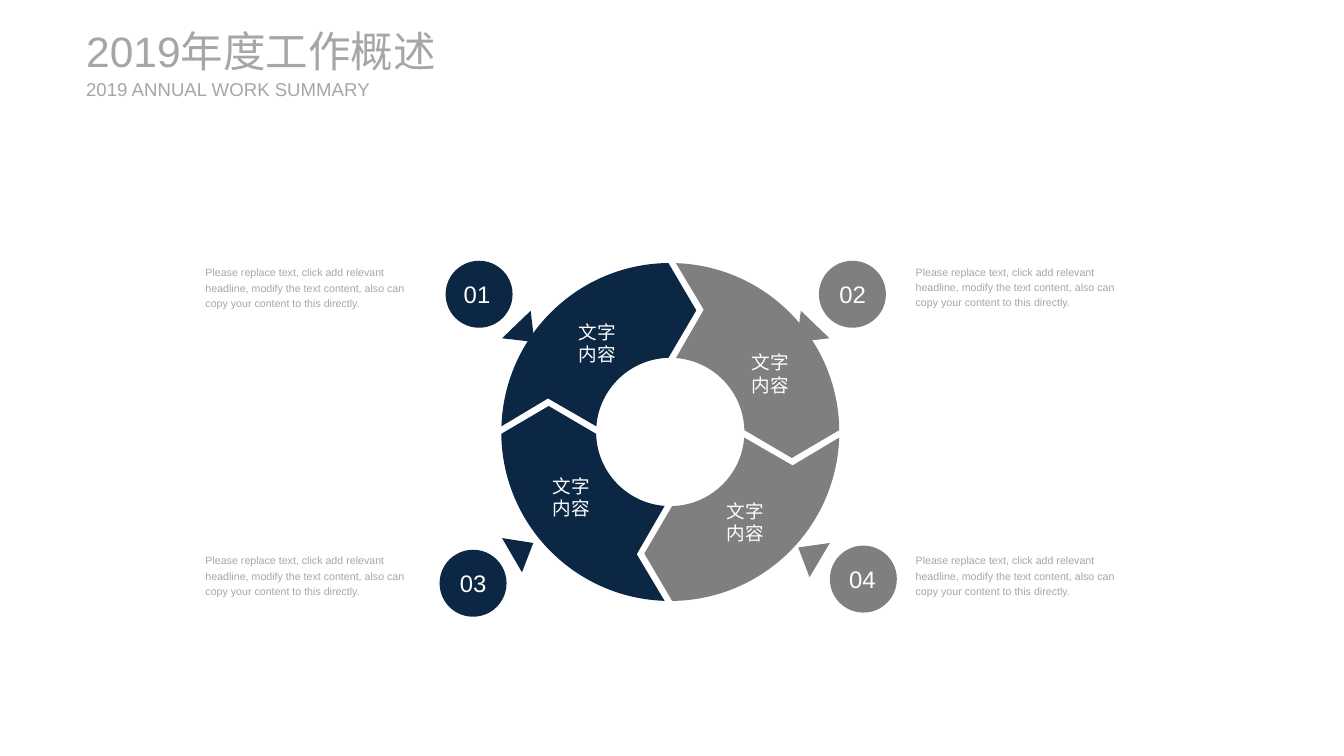
import math
from dataclasses import dataclass

import pptx
import pptx.dml.color
import pptx.enum.shapes
import pptx.enum.text
import pptx.oxml.ns
import pptx.util

Cm = pptx.util.Cm
Align = pptx.enum.text.PP_ALIGN
Anchor = pptx.enum.text.MSO_ANCHOR
Point = tuple[float, float]


@dataclass(frozen=True)
class Theme:
    font: str = "Arial"
    navy: str = "0C2744"
    gray: str = "7F7F7F"
    pale: str = "A6A6A6"
    white: str = "FFFFFF"
    title_size: int = 32
    number_size: int = 18
    label_size: int = 14
    caption_size: int = 8


@dataclass(frozen=True)
class Badge:
    number: str
    color: str
    corner: Point
    number_corner: Point
    pointer: tuple[Point, Point, Point]
    caption: Point
    caption_width: float


@dataclass(frozen=True)
class Segment:
    quarter_turns: int
    color: str
    label: Point


THEME = Theme()
CAPTION = (
    "Please replace text, click add relevant headline, modify the text "
    "content, also can copy your content to this directly."
)
RING_CENTER = (17.81, 11.48)
OUTER_RADIUS = 4.49
INNER_RADIUS = 1.97
TIP = (0.69, -3.23)
NOTCH = (-3.25, -0.89)
TIP_GAP = 0.05
NOTCH_GAP = 0.15
CURVE_STARTS = (1, 6)
BADGE_SIZE = 1.78

BADGES = [
    Badge("04", THEME.gray, (22.05, 14.5), (22.05, 14.71),
          ((21.51, 15.34), (22.05, 14.43), (21.21, 14.55)), (24.33, 14.66), 5.84),
    Badge("03", THEME.navy, (11.68, 14.61), (11.71, 14.81),
          ((13.34, 14.3), (13.87, 15.21), (14.17, 14.43)), (5.46, 14.66), 5.72),
    Badge("02", THEME.gray, (21.76, 6.93), (21.79, 7.14),
          ((21.28, 8.26), (22.04, 8.99), (21.17, 9.09)), (24.33, 6.99), 5.84),
    Badge("01", THEME.navy, (11.84, 6.93), (11.81, 7.14),
          ((14.1, 8.26), (13.34, 8.99), (14.2, 9.09)), (5.46, 7.01), 5.72),
]
SEGMENTS = [
    Segment(3, THEME.navy, (14.48, 12.27)),
    Segment(2, THEME.gray, (19.1, 12.93)),
    Segment(1, THEME.gray, (19.77, 8.99)),
    Segment(0, THEME.navy, (15.17, 8.18)),
]


def write_text(shape, text: str, *, size: int, color: str, align=Align.LEFT,
               anchor=Anchor.MIDDLE, line_spacing: float = 1.0) -> None:
    frame = shape.text_frame
    frame.auto_size = pptx.enum.text.MSO_AUTO_SIZE.NONE
    frame.word_wrap = True
    frame.vertical_anchor = anchor
    frame.margin_left = frame.margin_right = Cm(0)
    frame.margin_top = frame.margin_bottom = Cm(0)
    para = frame.paragraphs[0]
    para.alignment = align
    para.line_spacing = line_spacing
    span = para.add_run()
    span.text = text
    span.font.name = THEME.font
    span.font.size = pptx.util.Pt(size)
    span.font.color.rgb = pptx.dml.color.RGBColor.from_string(color)


def add_text_box(page, corner: Point, width: float, height: float, text: str, **style) -> None:
    box = page.shapes.add_textbox(Cm(corner[0]), Cm(corner[1]), Cm(width), Cm(height))
    write_text(box, text, **style)


def paint(shape, color: str) -> None:
    shape.shadow.inherit = False
    shape.fill.solid()
    shape.fill.fore_color.rgb = pptx.dml.color.RGBColor.from_string(color)
    shape.line.fill.background()


def add_polygon(shapes, points: list[Point], color: str):
    corners = [(Cm(x), Cm(y)) for x, y in points]
    builder = shapes.build_freeform(*corners[0])
    builder.add_line_segments(corners[1:], close=True)
    polygon = builder.convert_to_shape()
    paint(polygon, color)
    return polygon


def bend_lines(polygon, starts: tuple[int, ...]) -> None:
    lines = list(polygon.element.iter(pptx.oxml.ns.qn("a:lnTo")))
    for start in starts:
        curve, *others = lines[start:start + 3]
        curve.tag = pptx.oxml.ns.qn("a:cubicBezTo")
        for line in others:
            curve.append(line[0])
            line.getparent().remove(line)


def arc(radius: float, start: float, end: float) -> list[Point]:
    handle = 4 / 3 * math.tan((end - start) / 4)

    def at(angle: float, pull: float) -> Point:
        return (radius * (math.cos(angle) - pull * math.sin(angle)),
                radius * (math.sin(angle) + pull * math.cos(angle)))

    return [at(start, 0), at(start, handle), at(end, -handle), at(end, 0)]


def segment_outline(quarter_turns: int) -> list[Point]:
    top = 1.5 * math.pi
    outer = arc(OUTER_RADIUS, top - TIP_GAP / OUTER_RADIUS, math.pi + NOTCH_GAP / OUTER_RADIUS)
    inner = arc(INNER_RADIUS, math.pi + NOTCH_GAP / INNER_RADIUS, top - TIP_GAP / INNER_RADIUS)
    points = [TIP, *outer, NOTCH, *inner]
    for _ in range(quarter_turns):
        points = [(-y, x) for x, y in points]
    return [(RING_CENTER[0] + x, RING_CENTER[1] + y) for x, y in points]


def add_badge(page, badge: Badge) -> None:
    group = page.shapes.add_group_shape()
    circle = group.shapes.add_shape(
        pptx.enum.shapes.MSO_SHAPE.OVAL,
        Cm(badge.corner[0]), Cm(badge.corner[1]), Cm(BADGE_SIZE), Cm(BADGE_SIZE))
    paint(circle, badge.color)
    add_polygon(group.shapes, list(badge.pointer), badge.color)
    add_text_box(page, badge.number_corner, 1.73, 1.35, badge.number,
                 size=THEME.number_size, color=THEME.white, align=Align.CENTER)
    add_text_box(page, badge.caption, badge.caption_width, 1.19, CAPTION,
                 size=THEME.caption_size, color=THEME.pale, anchor=Anchor.TOP,
                 line_spacing=1.2)


def add_segment(page, segment: Segment) -> None:
    outline = add_polygon(page.shapes, segment_outline(segment.quarter_turns), segment.color)
    bend_lines(outline, CURVE_STARTS)
    add_text_box(page, segment.label, 1.4, 1.88, "文字内容", size=THEME.label_size,
                 color=THEME.white, align=Align.CENTER)


def add_heading(page) -> None:
    title = page.shapes.title
    title.left, title.top, title.width, title.height = Cm(2.29), Cm(0.66), Cm(10.97), Cm(1.37)
    write_text(title, "2019年度工作概述", size=THEME.title_size, color=THEME.pale)
    add_text_box(page, (2.29, 2.06), 7.8, 0.61, "2019 ANNUAL WORK SUMMARY",
                 size=THEME.label_size, color=THEME.pale)


def main() -> None:
    deck = pptx.Presentation()
    deck.slide_width, deck.slide_height = Cm(35.71), Cm(20.09)
    page = deck.slides.add_slide(deck.slide_layouts[5])
    add_heading(page)
    for badge in BADGES:
        add_badge(page, badge)
    for segment in SEGMENTS:
        add_segment(page, segment)
    deck.save("out.pptx")


if __name__ == "__main__":
    main()
